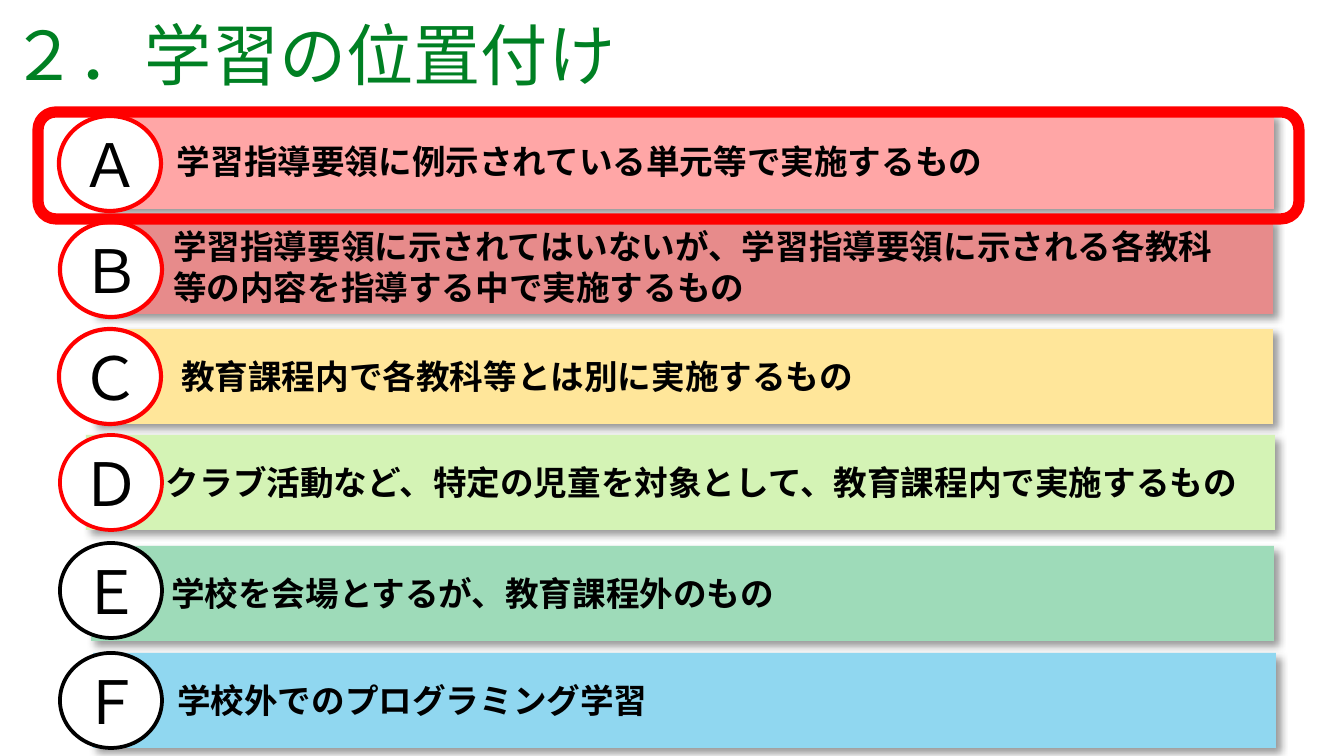
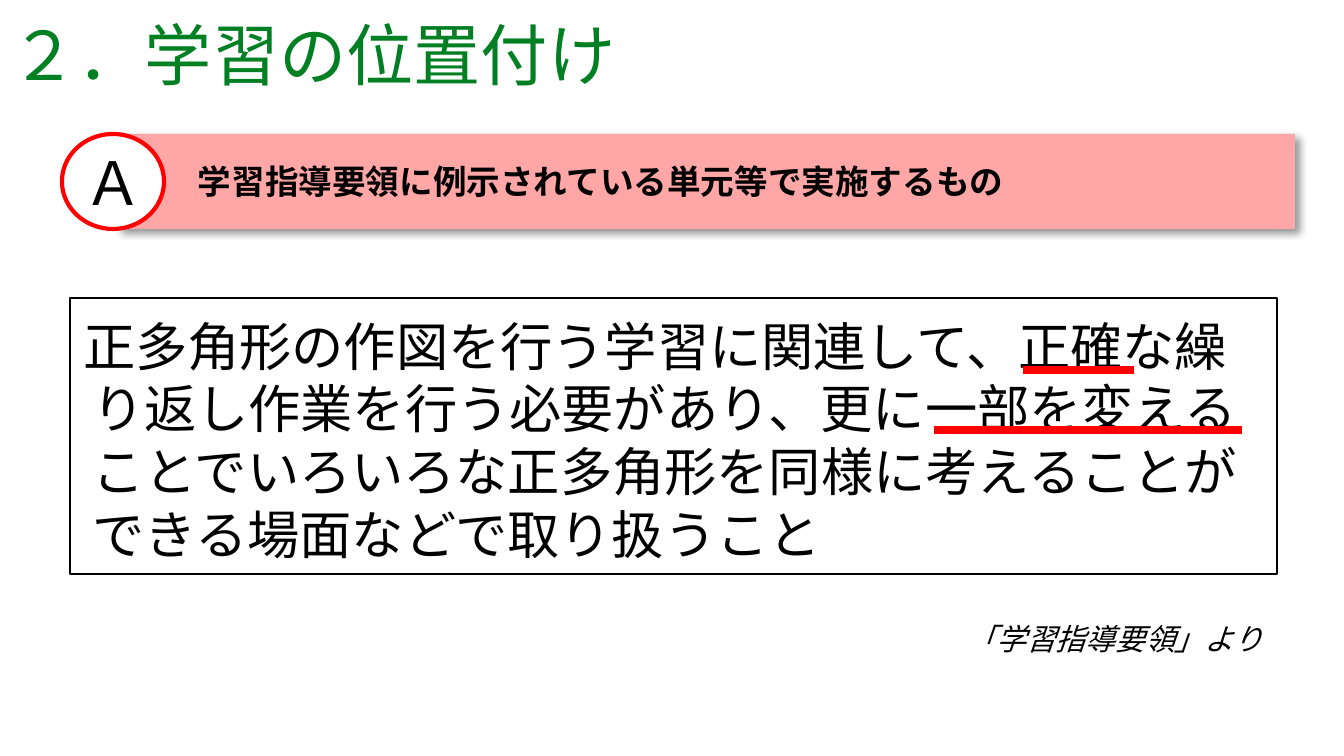
from dataclasses import dataclass

from pptx import Presentation
from pptx.dml.color import RGBColor
from pptx.enum.shapes import MSO_CONNECTOR, MSO_SHAPE
from pptx.enum.text import MSO_ANCHOR, MSO_AUTO_SIZE, PP_ALIGN
from pptx.oxml import parse_xml
from pptx.oxml.ns import nsdecls, qn
from pptx.util import Emu, Pt

PAGE_WIDTH, PAGE_HEIGHT = 1344, 756
EMU_PER_PX = 914400 / 134.4
JAPANESE_FONT = "Noto Sans CJK JP"
LATIN_FONT = "Arial"
LINE_RATIO = 1.2
BAR_HEIGHT = 95
BADGE_WIDTH = 102

BLACK = RGBColor(0x00, 0x00, 0x00)
WHITE = RGBColor(0xFF, 0xFF, 0xFF)
RED = RGBColor(0xFF, 0x00, 0x00)
TITLE_GREEN = RGBColor(0x00, 0x80, 0x23)
PINK = RGBColor(0xFF, 0xA6, 0xA6)
ROSE = RGBColor(0xE7, 0x8B, 0x8B)
YELLOW = RGBColor(0xFF, 0xE6, 0x9A)
LIME = RGBColor(0xD4, 0xF3, 0xB5)
GREEN = RGBColor(0x9E, 0xDB, 0xB9)
BLUE = RGBColor(0x90, 0xD7, 0xF0)

TITLE = "２．学習の位置付け"
QUOTE = ("正多角形の作図を行う学習に関連して、正確な繰り返し作業を行う必要があり、"
         "更に一部を変えることでいろいろな正多角形を同様に考えることができる場面などで取り扱うこと")
SOURCE = "「学習指導要領」より"


@dataclass
class Category:
    """One lettered category: its wording, colours and text indent in px."""

    letter: str
    text: str
    fill: RGBColor
    ring: RGBColor = RED
    ring_width: float = 2.25
    indent: int = 80


CATEGORY_A = Category("Ａ", "学習指導要領に例示されている単元等で実施するもの", PINK)
CATEGORY_B = Category("Ｂ", "学習指導要領に示されてはいないが、学習指導要領に示される各教科\n"
                      "等の内容を指導する中で実施するもの", ROSE)
CATEGORY_C = Category("Ｃ", "教育課程内で各教科等とは別に実施するもの", YELLOW, indent=88)
CATEGORY_D = Category("Ｄ", "クラブ活動など、特定の児童を対象として、教育課程内で実施するもの",
                      LIME, ring_width=2)
CATEGORY_E = Category("Ｅ", "学校を会場とするが、教育課程外のもの", GREEN, BLACK, 2)
CATEGORY_F = Category("Ｆ", "学校外でのプログラミング学習", BLUE, BLACK, 2, 84)

OVERVIEW_ROWS = [
    (CATEGORY_A, (97, 114, 1177), (59, 116)),
    (CATEGORY_B, (93, 219, 1180), (60, 222)),
    (CATEGORY_C, (93, 329, 1180), (59, 329)),
    (CATEGORY_D, (86, 435, 1189), (60, 435)),
    (CATEGORY_E, (91, 546, 1183), (60, 543)),
    (CATEGORY_F, (93, 653, 1183), (60, 653)),
]


def px(*lengths):
    """Turn px lengths into a list of EMU lengths."""
    return [Emu(round(length * EMU_PER_PX)) for length in lengths]


def write(shape, text, size, color=BLACK, align=PP_ALIGN.LEFT, font=JAPANESE_FONT,
          bold=False, italic=False, insets=(13, 7, 13, 7), anchor=MSO_ANCHOR.MIDDLE):
    """Set the text of a shape and format every run alike."""
    frame = shape.text_frame
    frame.text = text
    frame.word_wrap = True
    frame.auto_size = MSO_AUTO_SIZE.NONE
    frame.vertical_anchor = anchor
    (frame.margin_left, frame.margin_top,
     frame.margin_right, frame.margin_bottom) = px(*insets)
    for para in frame.paragraphs:
        para.alignment = align
        for span in para.runs:
            span.font.name = font
            span.font.size = Pt(size)
            span.font.bold = bold
            span.font.italic = italic
            span.font.color.rgb = color
            east_asian = parse_xml(f'<a:ea {nsdecls("a")} typeface="{JAPANESE_FONT}"/>')
            span.font._element.find(qn("a:latin")).addnext(east_asian)
    return frame.paragraphs


def fix_line_height(paras, size):
    """Give paragraphs an exact line height in proportion to the text size."""
    for para in paras:
        para.line_spacing = Pt(size * LINE_RATIO)


def add_box(shapes, kind, box, fill=None, line=None, width=1.0):
    """Add a preset shape without a shadow, with optional fill and outline."""
    shape = shapes.add_shape(kind, *px(*box))
    shape.shadow.inherit = False
    if fill is None:
        shape.fill.background()
    else:
        shape.fill.solid()
        shape.fill.fore_color.rgb = fill
    if line is None:
        shape.line.fill.background()
    else:
        shape.line.color.rgb = line
        shape.line.width = Pt(width)
    return shape


def cast_shadow(shape):
    """Give a shape a soft shadow to the lower right."""
    shape._element.spPr.find(qn("a:effectLst")).append(parse_xml(
        f'<a:outerShdw {nsdecls("a")} blurRad="{Pt(4)}" dist="{Pt(3)}" dir="2700000" '
        'algn="tl" rotWithShape="0"><a:srgbClr val="000000"><a:alpha val="40000"/>'
        '</a:srgbClr></a:outerShdw>'))


def add_category(shapes, category, bar_box, badge_at):
    """Add a coloured bar with its text and the round letter badge."""
    bar = add_box(shapes, MSO_SHAPE.RECTANGLE, (*bar_box, BAR_HEIGHT), category.fill)
    cast_shadow(bar)
    paras = write(bar, category.text, 18, bold=True, insets=(category.indent, 7, 13, 7))
    if len(paras) > 1:
        fix_line_height(paras, 18)
    badge = add_box(shapes, MSO_SHAPE.OVAL, (*badge_at, BADGE_WIDTH, BAR_HEIGHT),
                    WHITE, category.ring, category.ring_width)
    write(badge, category.letter, 32, align=PP_ALIGN.CENTER, insets=(0, 0, 0, 0))


def add_page(deck):
    """Add a page with the shared green title."""
    page = deck.slides.add_slide(deck.slide_layouts[5])
    title = page.shapes.title
    title.left, title.top, title.width, title.height = px(-27, -24, 680, 155)
    write(title, TITLE, 36, TITLE_GREEN, PP_ALIGN.CENTER)
    return page


def add_quote(page, box):
    """Add the framed quotation, its underlines and its source."""
    left, top, width, height = box
    insets = (13, 16, 13, 7)
    frame = add_box(page.shapes, MSO_SHAPE.RECTANGLE, box, line=BLACK, width=0.75)
    paras = write(frame, QUOTE, 28, insets=insets, anchor=MSO_ANCHOR.TOP)
    fix_line_height(paras, 28)
    paras[0].space_before = Pt(3)
    hang = px(9)[0]
    properties = paras[0]._p.get_or_add_pPr()
    properties.set("marL", str(hang))
    properties.set("indent", str(-hang))

    source = page.shapes.add_textbox(*px(left + width - 785, top + height + 31, 785, 59))
    paras = write(source, SOURCE, 16, align=PP_ALIGN.RIGHT, font=LATIN_FONT, italic=True,
                  insets=insets, anchor=MSO_ANCHOR.TOP)
    fix_line_height(paras, 16)

    for start, end, drop in ((953, 1064, 72), (864, 1172, 132)):
        underline = page.shapes.add_connector(
            MSO_CONNECTOR.STRAIGHT, *px(left + start, top + drop, left + end, top + drop))
        underline.line.color.rgb = RED
        underline.line.width = Pt(4.5)
        underline._element.spPr.append(parse_xml(f'<a:effectLst {nsdecls("a")}/>'))


def build_overview(deck):
    """Build the page listing all categories with the first one framed."""
    page = add_page(deck)
    group = page.shapes.add_group_shape()
    for row in OVERVIEW_ROWS:
        add_category(group.shapes, *row)
    add_box(page.shapes, MSO_SHAPE.ROUNDED_RECTANGLE, (38, 112, 1261, 107),
            line=RED, width=6)


def build_detail(deck):
    """Build the page explaining the first category."""
    page = add_page(deck)
    add_quote(page, (70, 298, 1207, 276))
    add_category(page.shapes, CATEGORY_A, (118, 134, 1177), (62, 134))


def main():
    """Build and save the deck."""
    deck = Presentation()
    deck.slide_width, deck.slide_height = px(PAGE_WIDTH, PAGE_HEIGHT)
    build_overview(deck)
    build_detail(deck)
    deck.save("out.pptx")


if __name__ == "__main__":
    main()
